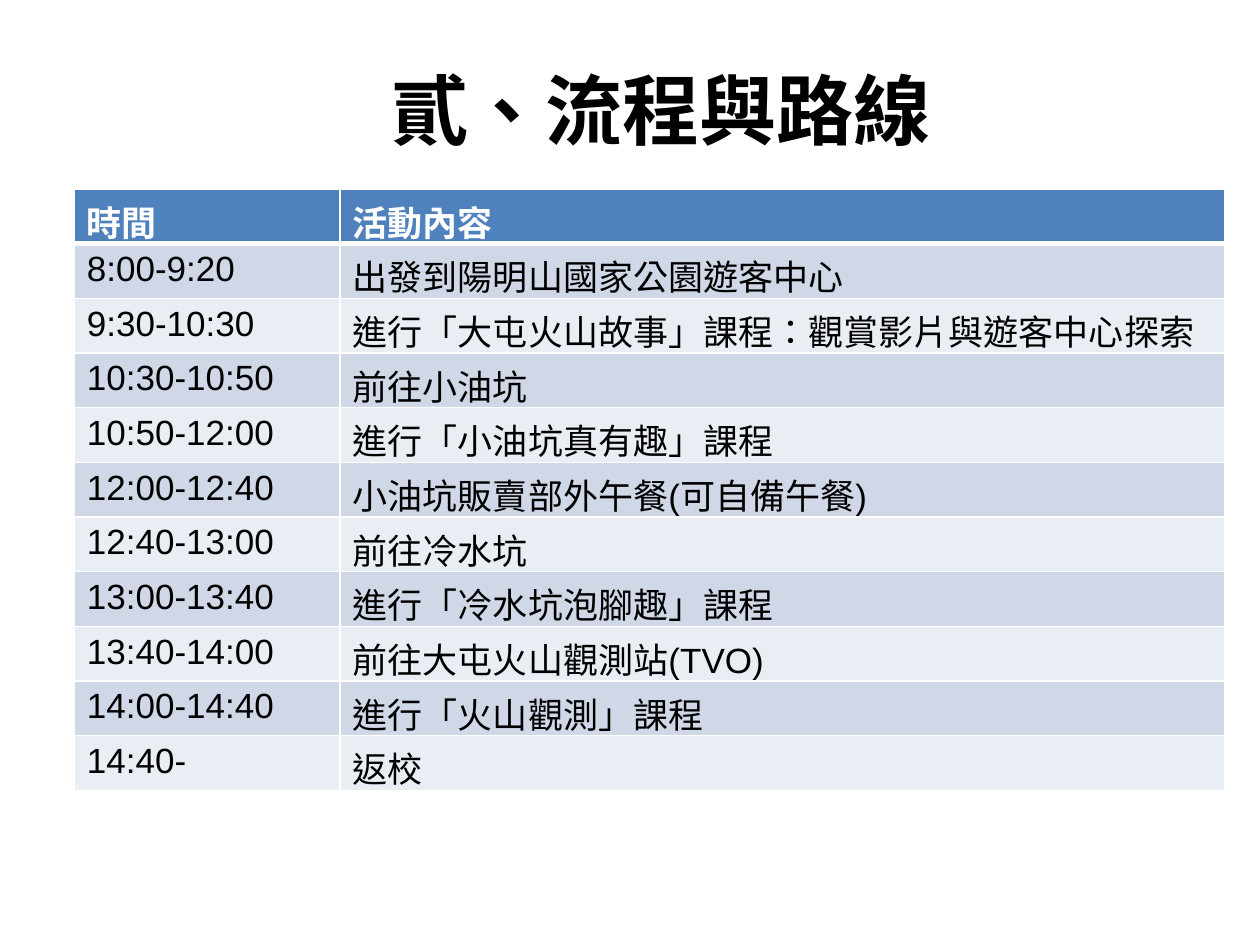
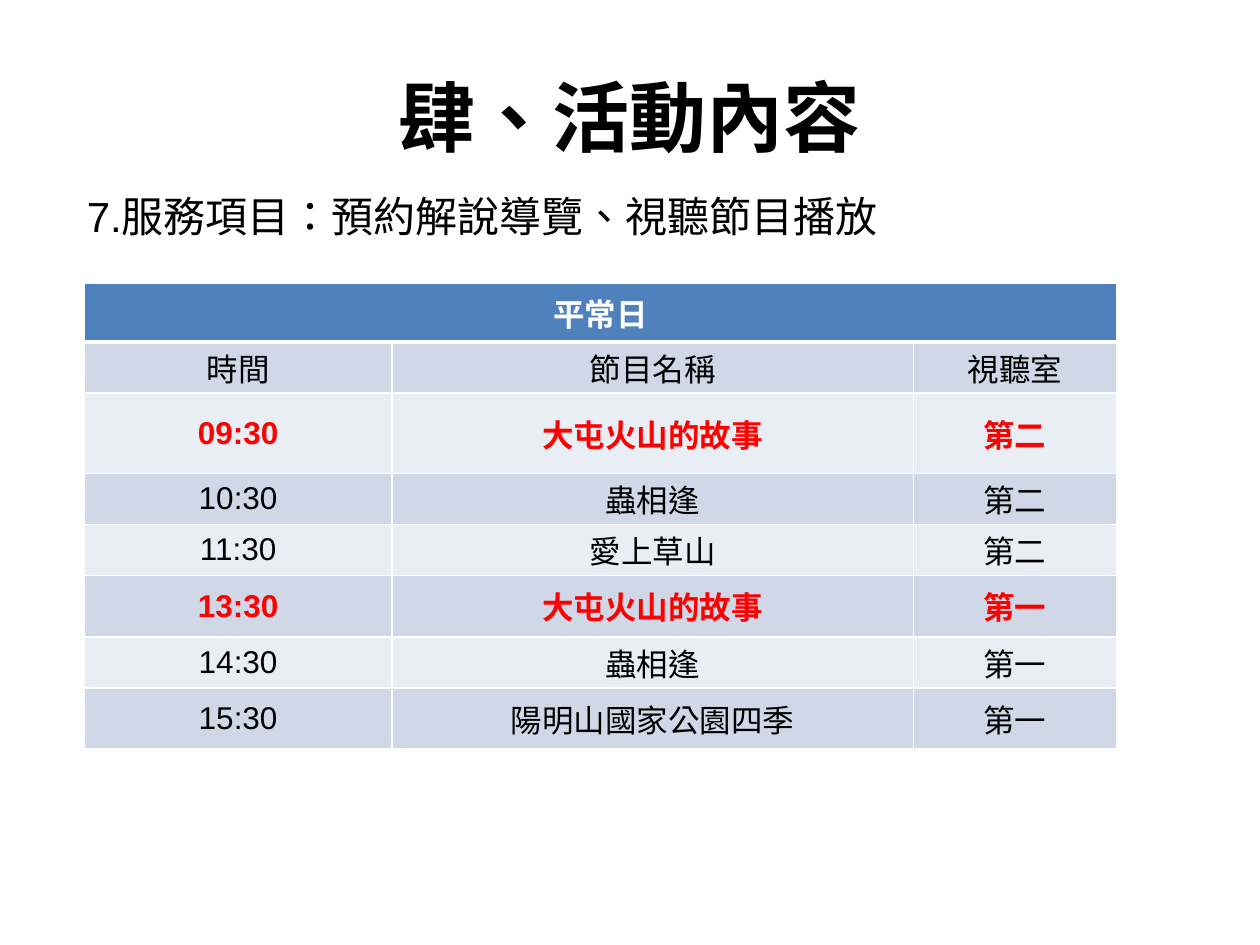
import dataclasses
import lxml.etree
import pptx
import pptx.dml.color
import pptx.enum.text
import pptx.oxml.ns
import pptx.util

ALIGN = pptx.enum.text.PP_ALIGN
ANCHOR = pptx.enum.text.MSO_ANCHOR


@dataclasses.dataclass(frozen=True)
class Theme:
    wide: float = 10
    high: float = 7.5
    title_font: str = "Noto Sans CJK SC"
    font: str = "Arial"
    ink: str = "000000"
    white: str = "FFFFFF"
    red: str = "FF0000"
    head: str = "4F81BD"
    bands: tuple = ("D0D8E8", "E9EDF4")
    title: int = 44
    body: int = 24
    plan: int = 20
    show: int = 18
    rule: int = 1
    thick: int = 3


THEME = Theme()


def across(share):
    return pptx.util.Inches(THEME.wide * share / 100)


def down(share):
    return pptx.util.Inches(THEME.high * share / 100)


def color(code):
    return pptx.dml.color.RGBColor.from_string(code)


def style(par, size, ink=THEME.ink, bold=False, name=THEME.font, align=ALIGN.LEFT):
    par.alignment = align
    par.font.name = name
    par.font.size = pptx.util.Pt(size)
    par.font.bold = bold
    par.font.color.rgb = color(ink)
    for run in par.runs:
        run.font.language_id = pptx.enum.lang.MSO_LANGUAGE_ID.TRADITIONAL_CHINESE


def add_text(slide, text, left, top, width, height, anchor=ANCHOR.TOP, **look):
    box = slide.shapes.add_textbox(across(left), down(top), across(width), down(height))
    frame = box.text_frame
    frame.word_wrap = True
    frame.vertical_anchor = anchor
    frame.text = text
    style(frame.paragraphs[0], **look)


def add_title(slide, text, left, top):
    add_text(slide, text, left, top, 90, 11.2, ANCHOR.MIDDLE, size=THEME.title,
             bold=True, name=THEME.title_font, align=ALIGN.CENTER)


def add_rules(cell, head):
    props = cell._tc.get_or_add_tcPr()
    qn = pptx.oxml.ns.qn
    for spot, side in enumerate("LRTB"):
        thick = head and side == "B"
        width = pptx.util.Pt(THEME.thick if thick else THEME.rule)
        line = lxml.etree.Element(qn(f"a:ln{side}"), w=str(width))
        fill = lxml.etree.SubElement(line, qn("a:solidFill"))
        lxml.etree.SubElement(fill, qn("a:srgbClr"), val=THEME.white)
        props.insert(spot, line)


def paint(cell, row):
    cell.fill.solid()
    cell.fill.fore_color.rgb = color(THEME.bands[(row - 1) % 2] if row else THEME.head)
    add_rules(cell, row < 1)


def tighten(cell):
    cell.vertical_anchor = ANCHOR.MIDDLE
    cell.margin_left = cell.margin_right = pptx.util.Inches(0.03)
    cell.margin_top = cell.margin_bottom = pptx.util.Inches(0.02)


def add_grid(slide, left, top, cols, rows, data, size, align=ALIGN.LEFT, tight=False, hot=()):
    frame = slide.shapes.add_table(len(rows), len(cols), across(left), down(top),
                                   across(sum(cols)), down(sum(rows)))
    table = frame.table
    for col, share in zip(table.columns, cols):
        col.width = across(share)
    for row, share in zip(table.rows, rows):
        row.height = down(share)
    for r, line in enumerate(data):
        ink = THEME.white if r == 0 else THEME.red if r in hot else THEME.ink
        for c in range(len(cols)):
            cell = table.cell(r, c)
            paint(cell, r)
            if tight and r:
                tighten(cell)
            cell.text = line[c] if c < len(line) else ""
            style(cell.text_frame.paragraphs[0], size, ink, r == 0 or r in hot, align=align)
        if len(line) < len(cols):
            table.cell(r, 0).merge(table.cell(r, len(cols) - 1))


def add_plan(slide):
    add_title(slide, "貳、流程與路線", 7.5, 5.87)
    plan = [
        ("時間", "活動內容"),
        ("8:00-9:20", "出發到陽明山國家公園遊客中心"),
        ("9:30-10:30", "進行「大屯火山故事」課程：觀賞影片與遊客中心探索"),
        ("10:30-10:50", "前往小油坑"),
        ("10:50-12:00", "進行「小油坑真有趣」課程"),
        ("12:00-12:40", "小油坑販賣部外午餐(可自備午餐)"),
        ("12:40-13:00", "前往冷水坑"),
        ("13:00-13:40", "進行「冷水坑泡腳趣」課程"),
        ("13:40-14:00", "前往大屯火山觀測站(TVO)"),
        ("14:00-14:40", "進行「火山觀測」課程"),
        ("14:40-", "返校"),
    ]
    add_grid(slide, 5.9, 20, (21.1, 70.2), [5.79] * len(plan), plan, THEME.plan)


def add_shows(slide):
    add_title(slide, "肆、活動內容", 5, 6.67)
    add_text(slide, "7.服務項目：預約解說導覽、視聽節目播放", 5.9, 19.47, 89.9, 7.6,
             size=THEME.body)
    shows = [
        ("平常日",),
        ("時間", "節目名稱", "視聽室"),
        ("09:30", "大屯火山的故事", "第二"),
        ("10:30", "蟲相逢", "第二"),
        ("11:30", "愛上草山", "第二"),
        ("13:30", "大屯火山的故事", "第一"),
        ("14:30", "蟲相逢", "第一"),
        ("15:30", "陽明山國家公園四季", "第一"),
    ]
    rows = (6.2, 5.4, 8.5, 5.4, 5.4, 6.5, 5.4, 6.5)
    add_grid(slide, 6.7, 30, (24.4, 41.4, 16.1), rows, shows, THEME.show,
             ALIGN.CENTER, tight=True, hot=(2, 5))


def main():
    deck = pptx.Presentation()
    deck.slide_width = across(100)
    deck.slide_height = down(100)
    for fill in (add_plan, add_shows):
        fill(deck.slides.add_slide(deck.slide_layouts[6]))
    deck.save("out.pptx")


if __name__ == "__main__":
    import pptx.enum.lang
    main()
